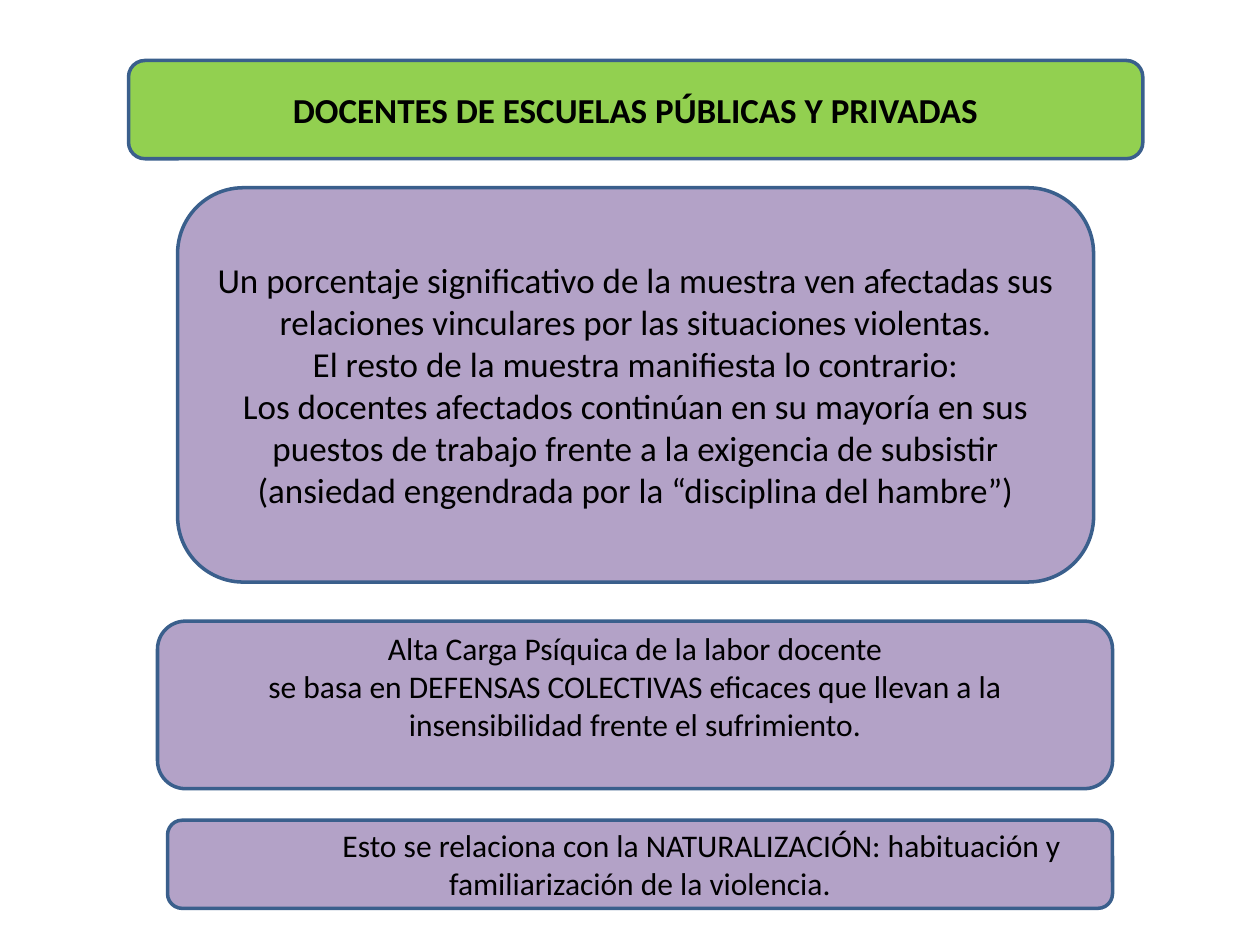
from pptx import Presentation
from pptx.dml.color import RGBColor
from pptx.enum.shapes import MSO_SHAPE as Shape
from pptx.enum.text import MSO_ANCHOR as Anchor, PP_ALIGN as Align
from pptx.util import Inches, Pt

GREEN, LILAC, BLUE, BLACK = "92D050", "B3A2C7", "3A5F8C", "000000"

# Content: position, fill, bottom inset, first-line indent, font, paragraphs
PANELS = [
    dict(at=(1.02, 0.48, 8.05, 0.78), fill=GREEN, bottom=0.05, indent=0,
         font=dict(size=Pt(20), bold=True),
         lines=["DOCENTES DE ESCUELAS PÚBLICAS Y PRIVADAS"]),
    dict(at=(1.41, 1.49, 7.27, 3.13), fill=LILAC, bottom=0.05, indent=0,
         font=dict(size=Pt(20)),
         lines=["Un porcentaje significativo de la muestra ven afectadas sus "
                "relaciones vinculares por las situaciones violentas.",
                "El resto de la muestra manifiesta lo contrario:",
                "Los docentes afectados continúan en su mayoría en sus puestos "
                "de trabajo frente a la exigencia de subsistir (ansiedad "
                "engendrada por la “disciplina del hambre”)"]),
    dict(at=(1.25, 4.93, 7.58, 1.33), fill=LILAC, bottom=0.35, indent=0,
         font=dict(size=Pt(18)),
         lines=["Alta Carga Psíquica de la labor docente",
                "se basa en DEFENSAS COLECTIVAS eficaces que llevan a la "
                "insensibilidad frente el sufrimiento."]),
    dict(at=(1.33, 6.51, 7.5, 0.7), fill=LILAC, bottom=0.05, indent=0.98,
         font=dict(size=Pt(18)),
         lines=["Esto se relaciona con la NATURALIZACIÓN: habituación y "
                "familiarización de la violencia."]),
]


def color(hex_value):
    return RGBColor.from_string(hex_value)


def add_panel(slide, at, fill, bottom, indent, font, lines):
    panel = slide.shapes.add_shape(Shape.ROUNDED_RECTANGLE, *map(Inches, at))
    panel.shadow.inherit = False
    panel.fill.solid()
    panel.fill.fore_color.rgb = color(fill)
    panel.line.color.rgb = color(BLUE)
    panel.line.width = Pt(2)

    frame = panel.text_frame
    frame.word_wrap = True
    frame.vertical_anchor = Anchor.MIDDLE
    frame.margin_bottom = Inches(bottom)
    for number, line in enumerate(lines):
        paragraph = frame.add_paragraph() if number else frame.paragraphs[0]
        paragraph.alignment = Align.CENTER
        if indent:
            paragraph._p.get_or_add_pPr().set("indent", str(Inches(indent)))
        run = paragraph.add_run()
        run.text = line
        run.font.color.rgb = color(BLACK)
        for name, value in {"name": "Calibri", **font}.items():
            setattr(run.font, name, value)


def main():
    deck = Presentation()
    deck.slide_width, deck.slide_height = Inches(10), Inches(7.5)
    slide = deck.slides.add_slide(deck.slide_layouts[6])
    for panel in PANELS:
        add_panel(slide, **panel)
    deck.save("out.pptx")


if __name__ == "__main__":
    main()
